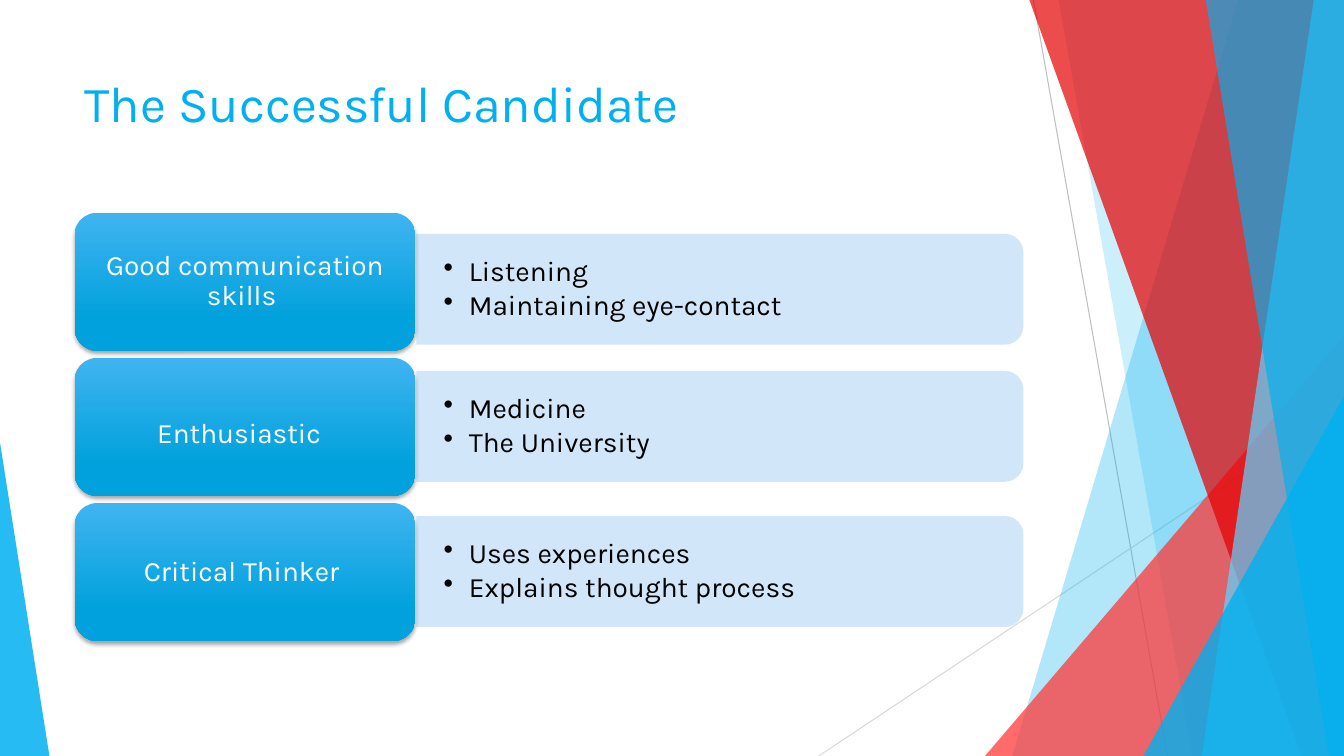
from lxml import etree
from pptx import Presentation
from pptx.dml.color import RGBColor
from pptx.enum.shapes import MSO_CONNECTOR, MSO_SHAPE
from pptx.enum.text import MSO_ANCHOR, PP_ALIGN
from pptx.oxml.ns import qn
from pptx.util import Emu, Pt

FONT = "Karla"
SKY, BAR_BLUE = "00B0F0", "CCE4F9"
WIDTH, HEIGHT = 1333, 750
EMU_PER_PX = 9144  # 100 px to the inch

# Decoration: (points, colour, opacity %)
BANDS_BACK = [
    ([(1228, 0), (WIDTH, 0), (WIDTH, HEIGHT), (1004, HEIGHT)], SKY, 30),
    ([(1050, 0), (WIDTH, 0), (WIDTH, HEIGHT), (1183, HEIGHT)], SKY, 20),
]
BANDS_FRONT = [
    ([(1021, 0), (WIDTH, 0), (WIDTH, HEIGHT), (1291, HEIGHT)], "E50000", 70),
    ([(1303, 0), (WIDTH, 0), (WIDTH, HEIGHT), (1192, HEIGHT)], "5DD4FF", 70),
    ([(1196, 0), (WIDTH, 0), (WIDTH, HEIGHT), (1318, HEIGHT)], SKY, 65),
]

# Rows: (label, points, drop of the bar below the top of the card)
ROWS = [
    ("Good communication skills ", ["Listening", "Maintaining eye-contact"], 21),
    ("Enthusiastic", ["Medicine", "The University"], 13),
    ("Critical Thinker ", ["Uses experiences", "Explains thought process"], 13),
]


def px(length):
    return Emu(round(length * EMU_PER_PX))


def colour(hex_string):
    return RGBColor.from_string(hex_string)


def set_opacity(colour_parent, percent):
    for element in colour_parent.iter(qn("a:srgbClr")):
        etree.SubElement(element, qn("a:alpha"), val=str(percent * 1000))


def paint(shape, hex_string, opacity):
    shape.shadow.inherit = False
    shape.fill.solid()
    shape.fill.fore_color.rgb = colour(hex_string)
    shape.line.fill.background()
    set_opacity(shape.element.spPr, opacity)


def format_run(run, size, hex_string):
    run.font.name = FONT
    run.font.size = Pt(size)
    run.font.color.rgb = colour(hex_string)


def set_margins(text_frame, side, top):
    text_frame.margin_left = text_frame.margin_right = px(side)
    text_frame.margin_top = text_frame.margin_bottom = px(top)


def add_hairline(slide, start, end, hex_string):
    line = slide.shapes.add_connector(
        MSO_CONNECTOR.STRAIGHT, *map(px, start + end))
    line.line.color.rgb = colour(hex_string)
    line.line.width = Pt(0.75)
    etree.SubElement(line.element.spPr, qn("a:effectLst"))


def add_band(slide, points, hex_string, opacity):
    builder = slide.shapes.build_freeform(*points[0], scale=EMU_PER_PX)
    builder.add_line_segments(points[1:], close=True)
    paint(builder.convert_to_shape(), hex_string, opacity)


def add_triangle(slide, left, top, width, apex, hex_string, opacity):
    """A triangle standing on the bottom edge of the slide."""
    triangle = slide.shapes.add_shape(
        MSO_SHAPE.ISOSCELES_TRIANGLE, *map(px, (left, top, width, HEIGHT - top)))
    triangle.adjustments[0] = apex
    paint(triangle, hex_string, opacity)


def add_decoration(slide):
    add_hairline(slide, (1025, 0), (1158, HEIGHT), "BFBFBF")
    add_hairline(slide, (WIDTH, 403), (812, HEIGHT), "D9D9D9")
    for band in BANDS_BACK:
        add_band(slide, *band)
    add_triangle(slide, 977, 333, 356, 1, "FF3333", 72)
    for band in BANDS_FRONT:
        add_band(slide, *band)
    add_triangle(slide, 1134, 393, 199, 1, SKY, 80)
    add_triangle(slide, 0, 439, 49, 0, SKY, 85)


def set_title(slide, text, left, top, width, height):
    title = slide.shapes.title
    title.left, title.top, title.width, title.height = map(
        px, (left, top, width, height))
    title.text_frame.text = text
    title.text_frame.vertical_anchor = MSO_ANCHOR.TOP
    paragraph = title.text_frame.paragraphs[0]
    paragraph.alignment = PP_ALIGN.LEFT
    format_run(paragraph.runs[0], 36, SKY)


def add_bar(slide, left, top, width, height):
    # Turned a quarter so that its rounded corners face right
    bar = slide.shapes.add_shape(
        MSO_SHAPE.ROUND_2_SAME_RECTANGLE,
        px(left + (width - height) / 2), px(top - (width - height) / 2),
        px(height), px(width))
    bar.rotation = 90
    paint(bar, BAR_BLUE, 90)


def add_bullets(slide, points, left, top, width, height):
    box = slide.shapes.add_textbox(*map(px, (left, top, width, height)))
    text_frame = box.text_frame
    text_frame.word_wrap = True
    text_frame.vertical_anchor = MSO_ANCHOR.MIDDLE
    set_margins(text_frame, 27, 14)
    text_frame.text = "\n".join(points)
    for paragraph in text_frame.paragraphs:
        paragraph.line_spacing = 0.9
        paragraph.space_after = Pt(3)
        format_run(paragraph.runs[0], 20, "000000")
        properties = paragraph._p.get_or_add_pPr()
        properties.set("marL", str(px(25)))
        properties.set("indent", str(px(-25)))
        etree.SubElement(properties, qn("a:buChar"), char="•")


def add_card(slide, label, left, top, width, height):
    card = slide.shapes.add_shape(
        MSO_SHAPE.ROUNDED_RECTANGLE, *map(px, (left, top, width, height)))
    card.line.fill.background()
    card.fill.gradient()
    card.fill.gradient_angle = 270
    for stop, position, shade in zip(
            card.fill.gradient_stops, (0, 0.78), ("3FB4F1", "00A1DC")):
        stop.position = position
        stop.color.rgb = colour(shade)

    # Soft shadow just below the card
    card.shadow.inherit = False
    effects = card.element.spPr.find(qn("a:effectLst"))
    shadow = etree.SubElement(
        effects, qn("a:outerShdw"), blurRad=str(Pt(3)), dist=str(Pt(2)),
        dir="5400000", algn="ctr", rotWithShape="0")
    etree.SubElement(shadow, qn("a:srgbClr"), val="000000")
    set_opacity(shadow, 35)

    text_frame = card.text_frame
    text_frame.word_wrap = True
    text_frame.vertical_anchor = MSO_ANCHOR.MIDDLE
    set_margins(text_frame, 8, 4)
    text_frame.text = label
    paragraph = text_frame.paragraphs[0]
    paragraph.alignment = PP_ALIGN.CENTER
    paragraph.line_spacing = 0.9
    format_run(paragraph.runs[0], 20, "FFFFFF")
    return paragraph


def add_rows(slide, left, top, width):
    card_width, card_height, pitch, bar_height = 338, 137, 144, 110
    bar_left, bar_width = left + card_width + 1, width - card_width - 1
    for index, (label, points, bar_drop) in enumerate(ROWS):
        row_top = top + index * pitch
        bar_top = row_top + bar_drop
        add_bar(slide, bar_left, bar_top, bar_width, bar_height)
        add_bullets(slide, points, bar_left, bar_top + 5,
                    bar_width - 5, bar_height - 10)
        paragraph = add_card(slide, label, left, row_top, card_width, card_height)
        if label == "Enthusiastic":  # a taller space lowers this label
            space = paragraph.add_run()
            space.text = " "
            format_run(space, 36, "FFFFFF")


def main():
    presentation = Presentation()
    presentation.slide_width, presentation.slide_height = px(WIDTH), px(HEIGHT)
    slide = presentation.slides.add_slide(presentation.slide_layouts[5])
    add_decoration(slide)
    set_title(slide, "The Successful Candidate", 74, 67, 940, 144)
    add_rows(slide, 74, 211, 941)
    presentation.save("out.pptx")


if __name__ == "__main__":
    main()
